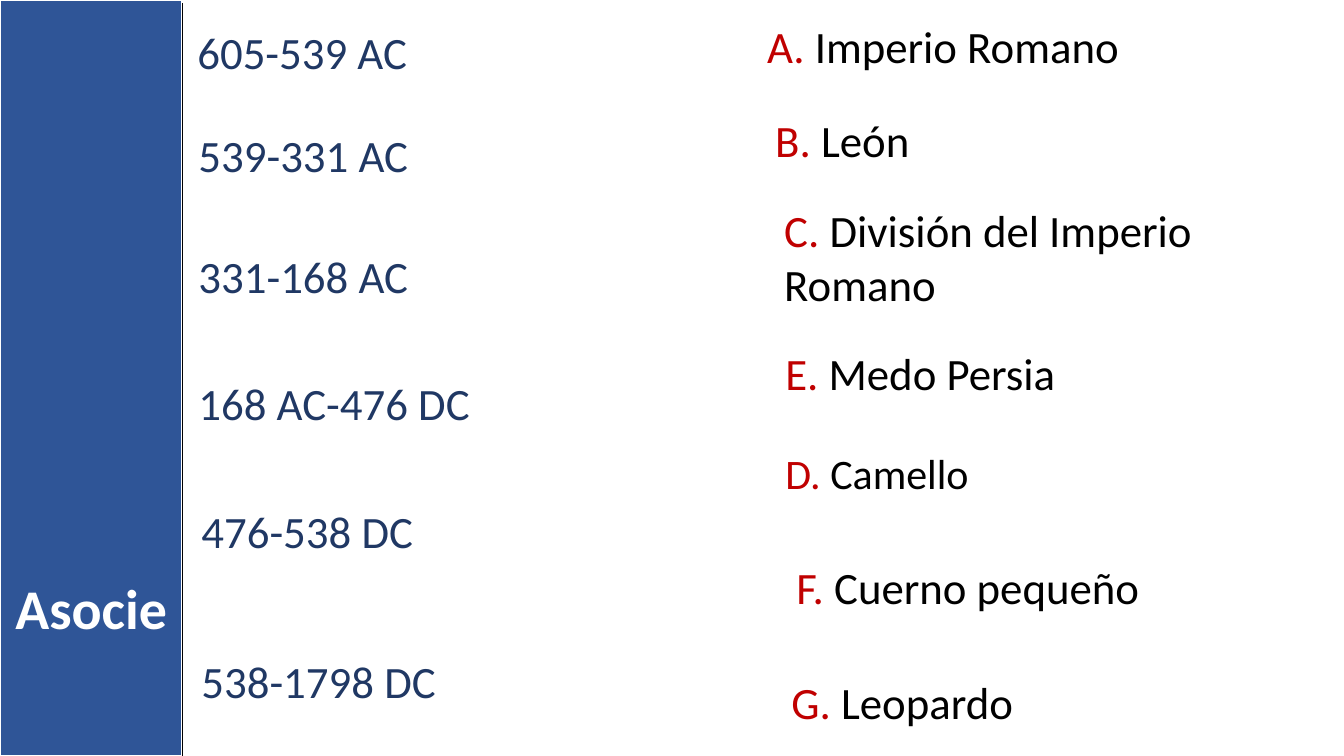
from pptx import Presentation
from pptx.dml.color import RGBColor as RGB
from pptx.enum.shapes import MSO_CONNECTOR as CONN, MSO_SHAPE as SHAPE
from pptx.enum.text import MSO_AUTO_SIZE as AUTO, PP_ALIGN as ALIGN
from pptx.oxml.ns import qn
from pptx.util import Inches, Pt
from lxml.etree import SubElement

THEME = {
    "font": "Calibri",
    "band": RGB.from_string("2F5597"),
    "white": RGB.from_string("FFFFFF"),
    "black": RGB.from_string("000000"),
    "date": RGB.from_string("203864"),
    "letter": RGB.from_string("C00000"),
    "title_size": 40,
    "item_size": 32,
    "small_size": 30,
}

prs = Presentation()
prs.slide_width, prs.slide_height = Inches(13.33), Inches(7.5)
s = prs.slides.add_slide(prs.slide_layouts[6])

# Grid of 100 columns by 100 rows
COL, ROW = prs.slide_width / 100, prs.slide_height / 100
BAND = 13.58
LINE_ROWS = 8.53


def cells(left, top, width, height):
    """Turn grid columns and rows into slide lengths."""
    return round(left * COL), round(top * ROW), round(width * COL), round(height * ROW)


def add_text(*runs, at, size=THEME["item_size"], bold=False, align=ALIGN.LEFT):
    """Add a one-paragraph text box from (text, colour) runs."""
    tf = s.shapes.add_textbox(*cells(*at)).text_frame
    tf.word_wrap = True
    tf.auto_size = AUTO.SHAPE_TO_FIT_TEXT
    p = tf.paragraphs[0]
    p.alignment = align
    for text, color in runs:
        r = p.add_run()
        r.text = text
        r.font.name, r.font.size, r.font.bold = THEME["font"], Pt(size), bold
        r.font.color.rgb = color


# Side band with its title and edge
band = s.shapes.add_shape(SHAPE.RECTANGLE, *cells(0, 0, BAND, 100))
band.shadow.inherit = False
band.fill.solid()
band.fill.fore_color.rgb = THEME["band"]
band.line.color.rgb = THEME["white"]
band.line.width = Pt(1.5)

add_text(("Asocie", THEME["white"]), at=(0, 75.2, BAND, 10.27),
         size=THEME["title_size"], bold=True, align=ALIGN.CENTER)

edge_x = round(BAND * COL)
edge = s.shapes.add_connector(CONN.STRAIGHT, edge_x, round(0.4 * ROW),
                              edge_x, prs.slide_height)
edge.line.color.rgb = THEME["black"]
edge.line.width = Pt(1)
SubElement(edge._element.spPr, qn("a:effectLst"))

# Dates: text, left, top, width
dates = [
    ("605-539 AC", 13.95, 2.67, 38.33),
    ("539-331 AC", 14.03, 16.27, 37.06),
    ("331-168 AC", 14.03, 32.27, 38.26),
    ("168 AC-476 DC", 14.03, 49.07, 37.06),
    ("476-538 DC", 14.25, 66, 35.78),
    ("538-1798 DC", 14.25, 85.87, 35.78),
]
for text, left, top, width in dates:
    add_text((text, THEME["date"]), at=(left, top, width, LINE_ROWS))

# Answers: letter, text, left, top, width, height, size
item, small = THEME["item_size"], THEME["small_size"]
answers = [
    ("A", "Imperio Romano", 56.34, 1.87, 37.81, LINE_ROWS, item),
    ("B", "León", 56.94, 14.27, 39.68, LINE_ROWS, item),
    ("C", "División del Imperio Romano", 57.61, 26.13, 36.61, 15.73, item),
    ("E", "Medo Persia", 57.69, 45.07, 41.49, LINE_ROWS, item),
    ("D", "Camello", 57.69, 58.53, 39.68, 8.13, small),
    ("F", "Cuerno pequeño", 58.51, 73.33, 36.61, LINE_ROWS, item),
    ("G", "Leopardo", 58.14, 88.53, 37.28, LINE_ROWS, item),
]
for letter, text, left, top, width, height, size in answers:
    add_text((f"{letter}. ", THEME["letter"]), (text, THEME["black"]),
             at=(left, top, width, height), size=size)

prs.save("out.pptx")
